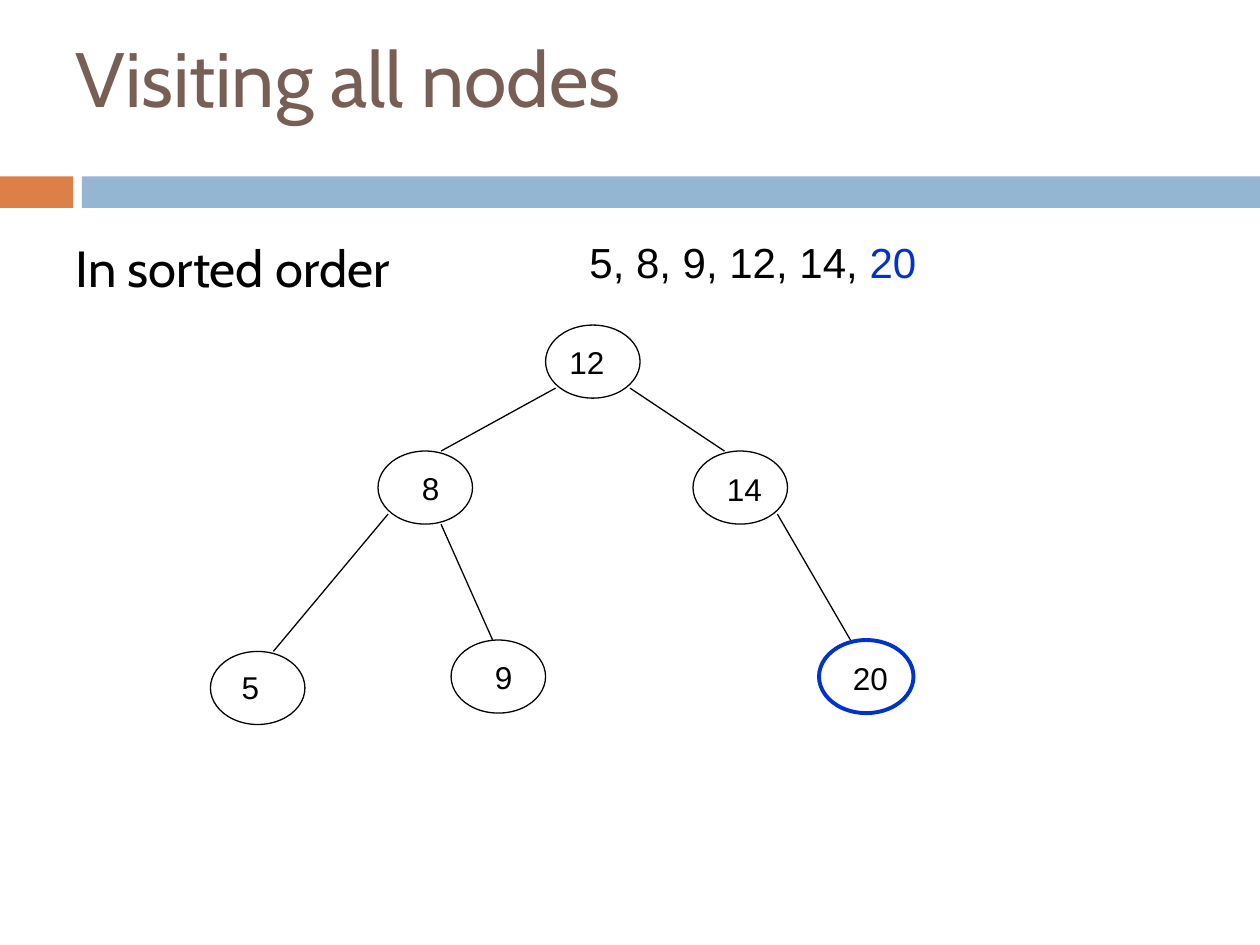
from dataclasses import dataclass

from lxml import etree
from pptx import Presentation
from pptx.dml.color import RGBColor
from pptx.enum.shapes import MSO_CONNECTOR, MSO_SHAPE
from pptx.enum.text import MSO_ANCHOR, MSO_AUTO_SIZE, PP_ALIGN
from pptx.oxml.ns import qn
from pptx.util import Inches, Pt

RECTANGLE = MSO_SHAPE.RECTANGLE
ELLIPSE = MSO_SHAPE.OVAL
STRAIGHT = MSO_CONNECTOR.STRAIGHT
LEFT = PP_ALIGN.LEFT
TOP = MSO_ANCHOR.TOP
MIDDLE = MSO_ANCHOR.MIDDLE
NO_AUTOFIT = MSO_AUTO_SIZE.NONE

COLORS = {
    "orange": "DD8047",
    "light_blue": "94B6D2",
    "brown": "775F55",
    "black": "000000",
    "visited": "0033CC",
}
NODE_WIDTH, NODE_HEIGHT = 0.75, 0.58
LABEL_WIDTH, LABEL_HEIGHT = 0.67, 0.4


@dataclass
class Bar:
    left: float
    width: float
    color: str


@dataclass
class Node:
    text: str
    left: float
    top: float
    label_left: float
    label_top: float
    color: str = "black"
    line_width: float = 0.75


@dataclass
class Edge:
    parent: str
    child: str
    parent_x: float
    parent_y: float
    child_x: float


BARS = [Bar(0, 0.58, "orange"), Bar(0.65, 9.35, "light_blue")]

NODES = {
    "12": Node("12", 4.33, 2.58, 4.42, 2.67),
    "8": Node("8", 3, 3.58, 3.25, 3.67),
    "14": Node("14", 5.5, 3.58, 5.67, 3.68),
    "5": Node(" 5", 1.67, 5.17, 1.75, 5.25),
    "9": Node("9", 3.58, 5.08, 3.83, 5.17),
    "20": Node("20", 6.5, 5.08, 6.67, 5.18, "visited", 2.25),
}

EDGES = [
    Edge("12", "8", 0.08, 0.5, 0.5),
    Edge("12", "14", 0.67, 0.5, 0.25),
    Edge("8", "5", 0.08, 0.5, 0.5),
    Edge("8", "9", 0.5, NODE_HEIGHT, 0.33),
    Edge("14", "20", 0.67, 0.5, 0.25),
]


def color_of(name: str) -> RGBColor:
    return RGBColor.from_string(COLORS[name])


def place(shape, left: float, top: float, width: float, height: float) -> None:
    shape.left, shape.top = Inches(left), Inches(top)
    shape.width, shape.height = Inches(width), Inches(height)


def format_run(run, font_name: str, size: float, color: str) -> None:
    run.font.name = font_name
    run.font.size = Pt(size)
    run.font.color.rgb = color_of(color)


def fill_placeholder(shape, text: str, size: float, color: str, anchor) -> None:
    text_frame = shape.text_frame
    text_frame.text = text
    text_frame.word_wrap = True
    text_frame.auto_size = NO_AUTOFIT
    text_frame.vertical_anchor = anchor
    paragraph = text_frame.paragraphs[0]
    paragraph.alignment = LEFT
    format_run(paragraph.runs[0], "Cabin", size, color)


def remove_bullet(paragraph) -> None:
    properties = paragraph._p.get_or_add_pPr()
    properties.set("marL", "0")
    properties.set("indent", "0")
    etree.SubElement(properties, qn("a:buNone"))


def add_text(slide, text: str, left: float, top: float, width: float,
             height: float, size: float):
    box = slide.shapes.add_textbox(
        Inches(left), Inches(top), Inches(width), Inches(height))
    box.text_frame.word_wrap = True
    box.text_frame.text = text
    paragraph = box.text_frame.paragraphs[0]
    format_run(paragraph.runs[0], "Arial", size, "black")
    return paragraph


def draw_bar(slide, bar: Bar) -> None:
    shape = slide.shapes.add_shape(
        RECTANGLE, Inches(bar.left), Inches(1.4), Inches(bar.width), Inches(0.25))
    shape.shadow.inherit = False
    shape.fill.solid()
    shape.fill.fore_color.rgb = color_of(bar.color)
    shape.line.fill.background()


def draw_node(slide, node: Node) -> None:
    shape = slide.shapes.add_shape(
        ELLIPSE, Inches(node.left), Inches(node.top),
        Inches(NODE_WIDTH), Inches(NODE_HEIGHT))
    shape.shadow.inherit = False
    shape.fill.background()
    shape.line.color.rgb = color_of(node.color)
    shape.line.width = Pt(node.line_width)
    add_text(slide, node.text, node.label_left, node.label_top,
             LABEL_WIDTH, LABEL_HEIGHT, 18)


def draw_edge(slide, edge: Edge) -> None:
    parent, child = NODES[edge.parent], NODES[edge.child]
    connector = slide.shapes.add_connector(
        STRAIGHT,
        Inches(parent.left + edge.parent_x), Inches(parent.top + edge.parent_y),
        Inches(child.left + edge.child_x), Inches(child.top))
    connector.line.color.rgb = color_of("black")
    connector.line.width = Pt(0.75)
    etree.SubElement(connector._element.spPr, qn("a:effectLst"))


def main() -> None:
    presentation = Presentation()
    presentation.slide_width = Inches(10)
    presentation.slide_height = Inches(7.5)
    slide = presentation.slides.add_slide(presentation.slide_layouts[1])

    for bar in BARS:
        draw_bar(slide, bar)

    title = slide.shapes.title
    place(title, 0.5, 0.13, 8.25, 0.95)
    fill_placeholder(title, "Visiting all nodes", 44, "brown", MIDDLE)

    body = slide.placeholders[1]
    place(body, 0.5, 1.83, 2.75, 0.66)
    fill_placeholder(body, "In sorted order", 29, "black", TOP)
    body_paragraph = body.text_frame.paragraphs[0]
    body_paragraph.space_before = Pt(7)
    remove_bullet(body_paragraph)

    for node in NODES.values():
        draw_node(slide, node)
    for edge in EDGES:
        draw_edge(slide, edge)

    sequence = add_text(slide, "5, 8, 9, 12, 14, ", 4.58, 1.83, 4.42, 0.5, 24)
    latest = sequence.add_run()
    latest.text = "20"
    format_run(latest, "Arial", 24, "visited")

    presentation.save("out.pptx")


if __name__ == "__main__":
    main()
